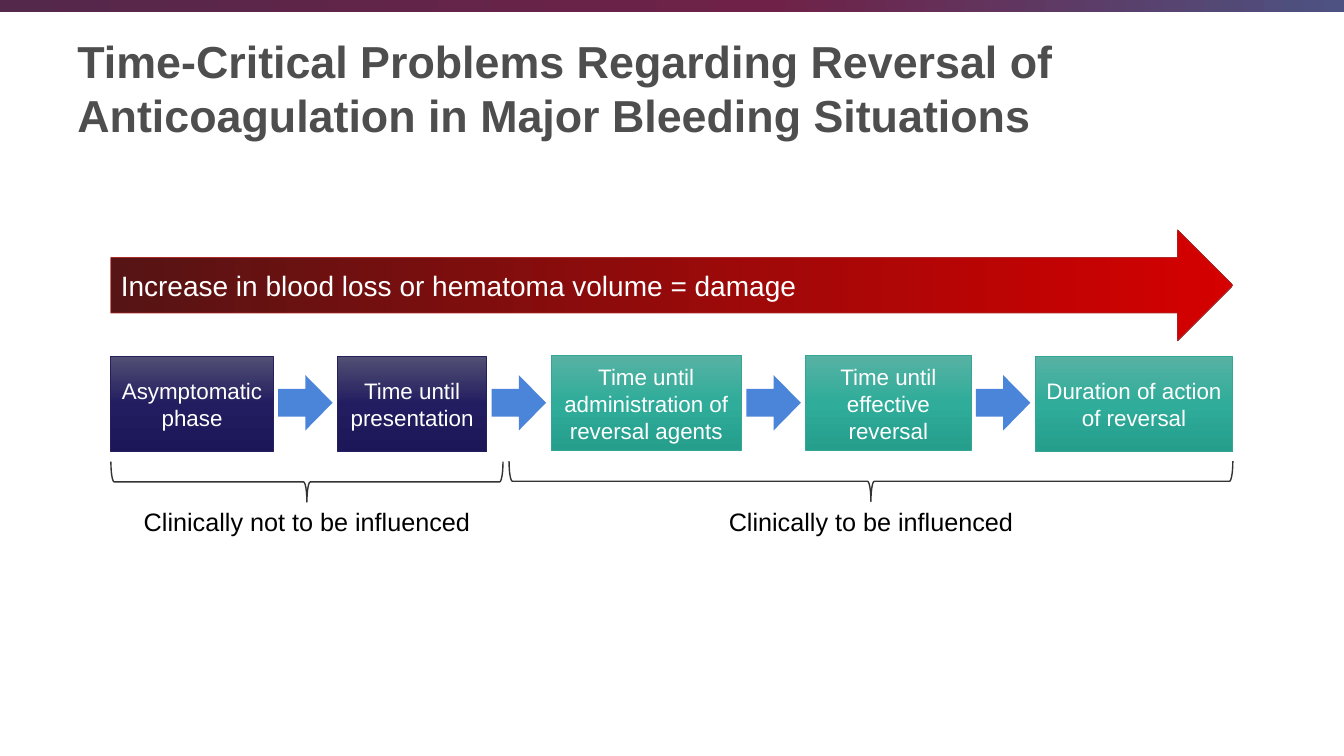
from dataclasses import dataclass

import pptx
import pptx.dml.color
import pptx.enum.shapes
import pptx.enum.text
import pptx.oxml
import pptx.oxml.ns
import pptx.util

Pt = pptx.util.Pt
KIND = pptx.enum.shapes.MSO_SHAPE
ALIGN = pptx.enum.text.PP_ALIGN
ANCHOR = pptx.enum.text.MSO_ANCHOR

HUES = {
    "title": "4D4E4D", "white": "FFFFFF", "black": "000000",
    "navy": "25205D", "teal": "35A696", "red": "AB2929",
    "step": "4A85D9", "brace": "333333",
}
# Gradient stops: percent along the fill, colour
FADES = {
    "band": [(0, "54284B"), (57, "6F2147"), (100, "4D5282")],
    "navy": [(0, "514F73"), (50, "221D60"), (100, "1C1758")],
    "teal": [(0, "57B2A3"), (50, "2FAC9A"), (100, "259E8C")],
    "red": [(0, "561414"), (100, "D50000")],
}


@dataclass
class Phase:
    text: str
    width: float
    hue: str
    top: float = 254.9


@dataclass
class Group:
    text: str
    left: float
    width: float
    top: float


PHASES = [
    Phase("Asymptomatic phase", 116, "navy"),
    Phase("Time until presentation", 106.6, "navy"),
    Phase("Time until administration of reversal agents", 136.1, "teal", 254.2),
    Phase("Time until effective reversal", 118.1, "teal", 254.2),
    Phase("Duration of action of reversal", 141.1, "teal"),
]
GROUPS = [
    Group("Clinically not to be influenced", 79.2, 280.1, 329.8),
    Group("Clinically to be influenced", 363.6, 517, 329.4),
]
LEFT, SPAN = 79.2, 801.4
GAP = (SPAN - sum(p.width for p in PHASES)) / (len(PHASES) - 1)
STEP = 38.9


def color(name: str) -> pptx.dml.color.RGBColor:
    return pptx.dml.color.RGBColor.from_string(HUES[name])


def shade(shape, name: str, angle: float = 0) -> None:
    """Fill with a linear gradient; angle runs counter-clockwise."""
    shape.fill.gradient()
    shape.fill.gradient_angle = angle
    stops = shape._element.spPr.find(".//" + pptx.oxml.ns.qn("a:gsLst"))
    stops.clear()
    for pos, tone in FADES[name]:
        stops.append(pptx.oxml.parse_xml(
            f'<a:gs {pptx.oxml.ns.nsdecls("a")} pos="{pos * 1000}">'
            f'<a:srgbClr val="{tone}"/></a:gs>'))


def draw(slide, kind, left: float, top: float, width: float, height: float,
         line: str = "", weight: float = 0.5):
    shape = slide.shapes.add_shape(kind, Pt(left), Pt(top), Pt(width), Pt(height))
    shape.shadow.inherit = False
    if line:
        shape.line.color.rgb = color(line)
        shape.line.width = Pt(weight)
    else:
        shape.line.fill.background()
    return shape


def write(shape, text: str, *, size: float, hue: str = "white", bold: bool = False,
          align=ALIGN.CENTER, anchor=ANCHOR.MIDDLE, pad: float = 3.6) -> None:
    frame = shape.text_frame
    frame.word_wrap = True
    frame.vertical_anchor = anchor
    frame.margin_left = frame.margin_right = Pt(7.2)
    frame.margin_top = frame.margin_bottom = Pt(pad)
    para = frame.paragraphs[0]
    para.text = text
    para.alignment = align
    para.font.name = "Arial"
    para.font.size = Pt(size)
    para.font.bold = bold
    para.font.color.rgb = color(hue)


def chain(slide) -> None:
    left = LEFT
    for spot, phase in enumerate(PHASES):
        if spot:
            arrow = draw(slide, KIND.RIGHT_ARROW, left - (GAP + STEP) / 2, 267.9,
                         STEP, 39.6)
            arrow.fill.solid()
            arrow.fill.fore_color.rgb = color("step")
        box = draw(slide, KIND.RECTANGLE, left, phase.top, phase.width, 67.7, phase.hue)
        shade(box, phase.hue, 270)
        write(box, phase.text, size=16, pad=0)
        left += phase.width + GAP


def bracket(slide, group: Group) -> None:
    # The brace is drawn upright, then turned about its centre
    deep = 28.8
    mid = group.left + group.width / 2
    brace = draw(slide, KIND.LEFT_BRACE, mid - deep / 2,
                 group.top + (deep - group.width) / 2, deep, group.width, "brace", 1)
    brace.fill.background()
    brace.adjustments[0] = 0.084
    brace.rotation = 270
    label = slide.shapes.add_textbox(Pt(mid - 135), Pt(357.8), Pt(270), Pt(28.8))
    write(label, group.text, size=18, hue="black", anchor=ANCHOR.TOP)


def main() -> None:
    deck = pptx.Presentation()
    deck.slide_width, deck.slide_height = Pt(960), Pt(540)
    slide = deck.slides.add_slide(deck.slide_layouts[6])

    # Top band and title
    shade(draw(slide, KIND.RECTANGLE, 0, 0, 960, 8.6), "band")
    title = slide.shapes.add_textbox(Pt(48.2), Pt(15.8), Pt(846), Pt(93.6))
    write(title, "Time-Critical Problems Regarding Reversal of "
          "Anticoagulation in Major Bleeding Situations",
          size=32, hue="title", bold=True, align=ALIGN.LEFT)

    # Damage arrow
    damage = draw(slide, KIND.RIGHT_ARROW, LEFT, 164.2, SPAN, 79.2, "red")
    shade(damage, "red")
    write(damage, "Increase in blood loss or hematoma volume = damage",
          size=20, align=ALIGN.LEFT)

    # Phases and their groups
    chain(slide)
    for group in GROUPS:
        bracket(slide, group)

    deck.save("out.pptx")


if __name__ == "__main__":
    main()
